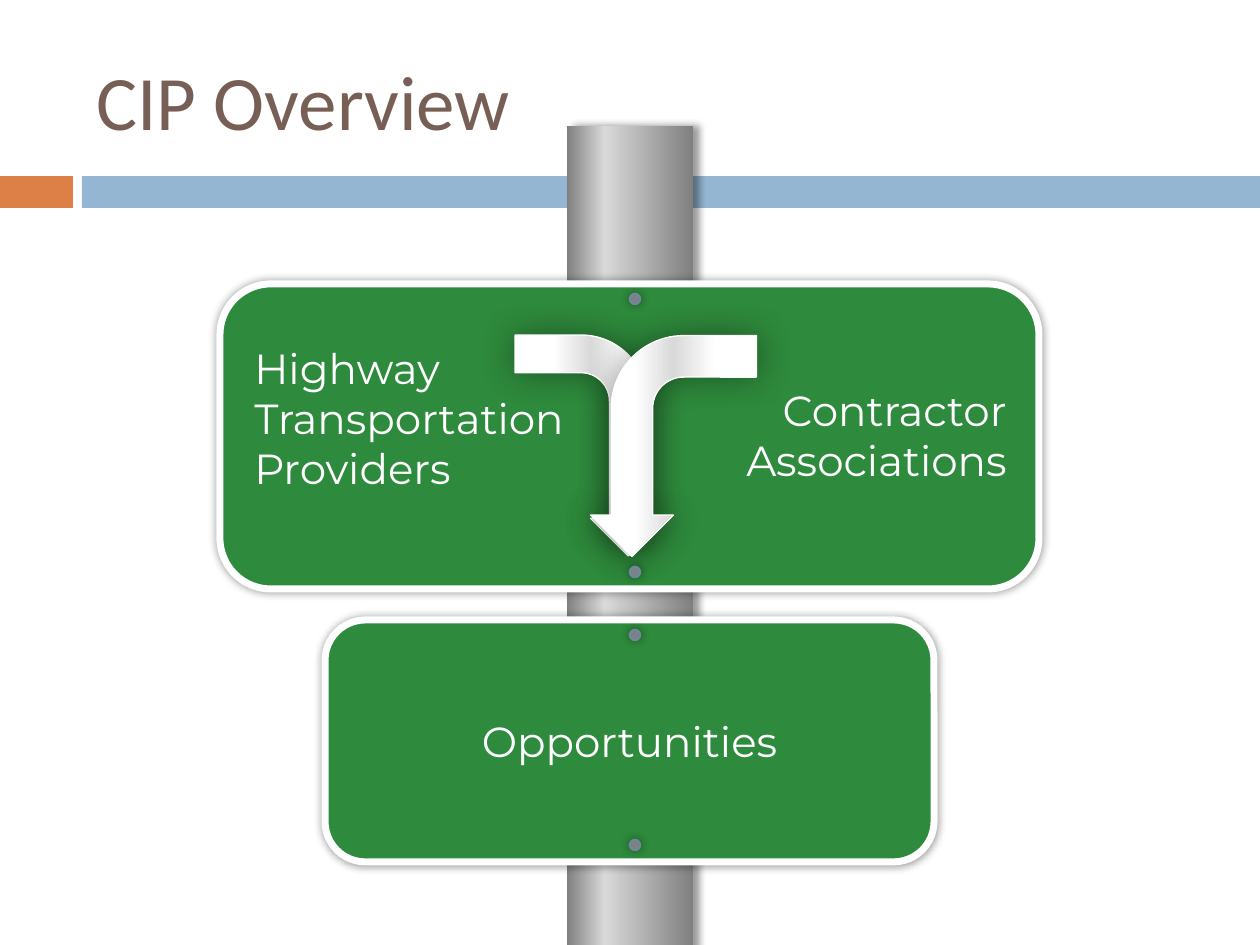
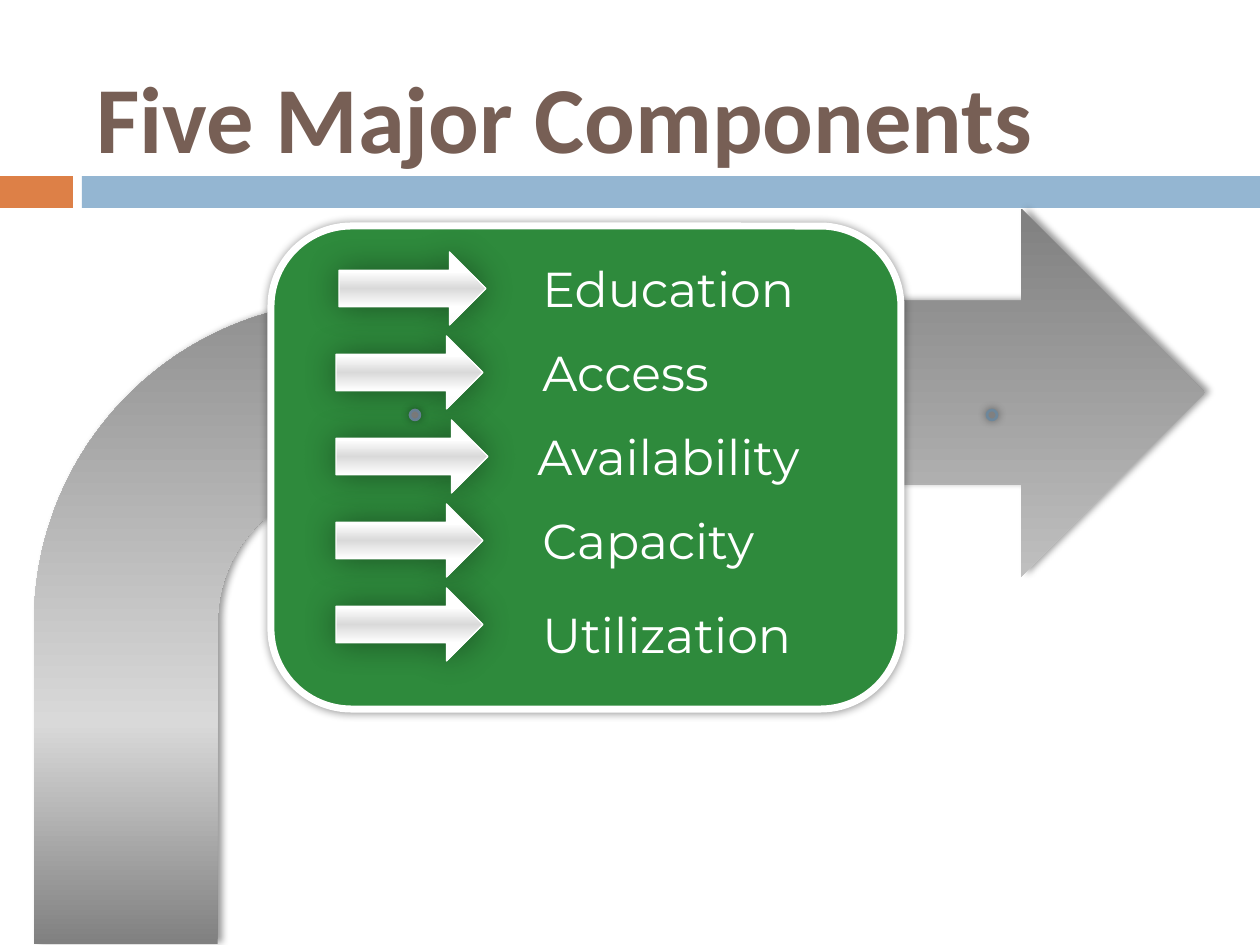
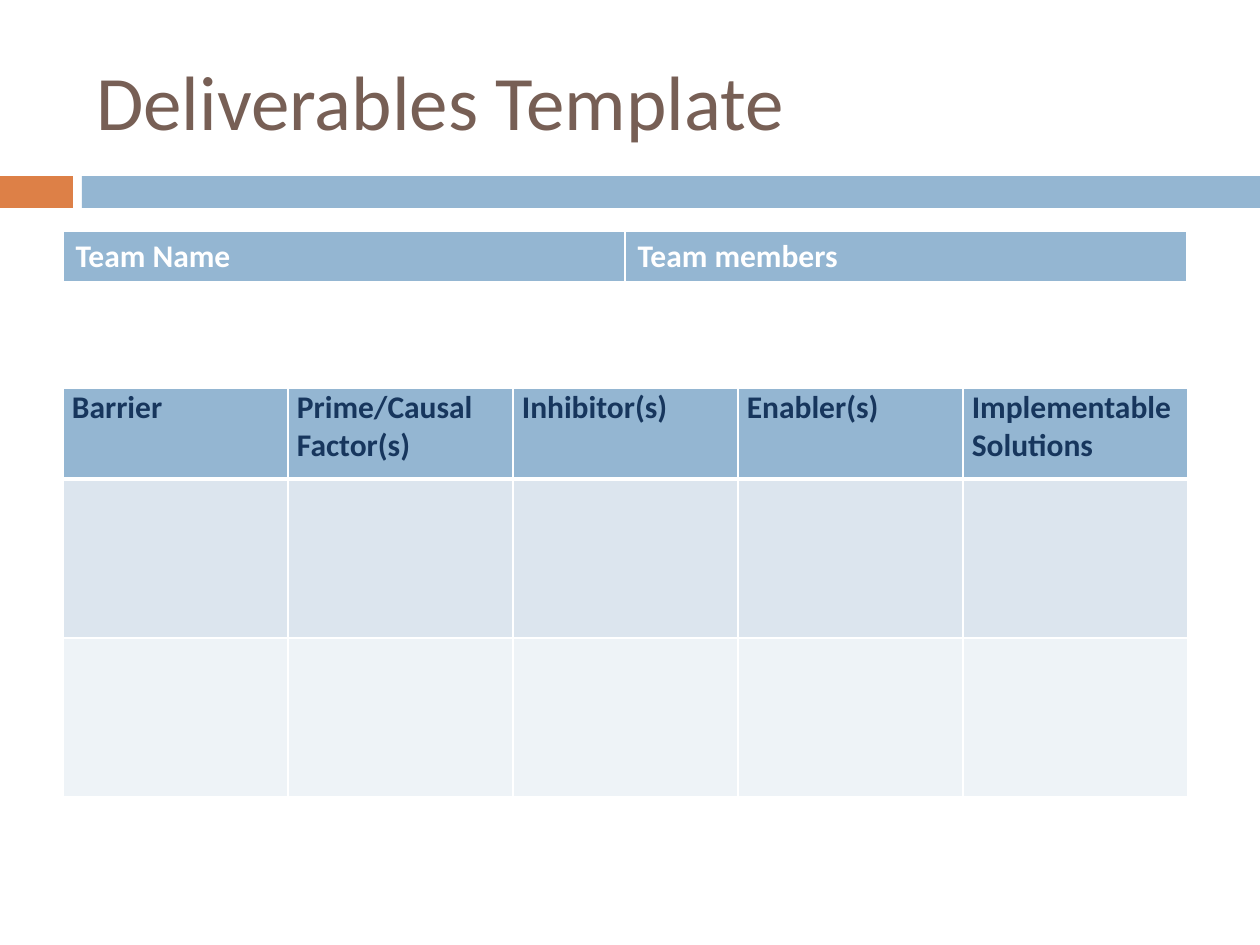
from dataclasses import dataclass

from lxml.etree import SubElement
from pptx import Presentation
from pptx.dml.color import RGBColor
from pptx.enum.shapes import MSO_SHAPE
from pptx.enum.text import MSO_ANCHOR, MSO_AUTO_SIZE, PP_ALIGN
from pptx.oxml.ns import qn
from pptx.util import Emu, Pt


@dataclass(frozen=True)
class Theme:
    heading_font: str = "Calibri"
    sign_font: str = "Montserrat"
    title_size: int = 44
    large_title_size: int = 54
    sign_size: int = 24
    list_size: int = 28
    table_size: int = 18
    white: str = "FFFFFF"
    black: str = "000000"
    brown: str = "775F55"
    orange: str = "DD8047"
    blue: str = "94B6D2"
    navy: str = "17365D"
    green: str = "2E8A3C"
    gray: str = "808080"
    rivet_rim: str = "6D879B"
    row_fills: tuple = ("DCE5EE", "EEF3F7")
    metal: tuple = ((0, "808080"), (30, "D9D9D9"), (100, "808080"))
    gloss: tuple = ((27, "FFFFFF"), (50, "D9D9D9"), (75, "FFFFFF"))


def px(length):
    return Emu(round(length * 914400 / 126))


class Deck:
    """Draws road-sign slides in one theme."""

    def __init__(self, theme):
        self.theme = theme
        self.presentation = Presentation()
        self.presentation.slide_width = px(1260)
        self.presentation.slide_height = px(945)
        self.slide = None

    def new_slide(self, title, box=(84, 32, 1124, 136), size=None, bold=False):
        theme = self.theme
        self.slide = self.presentation.slides.add_slide(self.presentation.slide_layouts[6])
        self.shape(MSO_SHAPE.RECTANGLE, (0, 176, 73, 32), theme.orange)
        self.shape(MSO_SHAPE.RECTANGLE, (82, 176, 1178, 32), theme.blue)
        frame = self.text_box(box).text_frame
        frame.vertical_anchor = MSO_ANCHOR.MIDDLE
        self.set_text(frame, title, size or theme.title_size, theme.brown,
                      theme.heading_font, bold)

    def set_text(self, frame, text, size, color, font, bold=False, align=PP_ALIGN.LEFT):
        frame.text = text
        for paragraph in frame.paragraphs:
            paragraph.alignment = align
            for run in paragraph.runs:
                run.font.name = font
                run.font.size = Pt(size)
                run.font.bold = bold
                run.font.color.rgb = RGBColor.from_string(color)

    def text_box(self, box):
        text_box = self.slide.shapes.add_textbox(*map(px, box))
        text_box.text_frame.word_wrap = True
        return text_box

    def label(self, box, text, size, align=PP_ALIGN.LEFT):
        frame = self.text_box(box).text_frame
        frame.auto_size = MSO_AUTO_SIZE.SHAPE_TO_FIT_TEXT
        self.set_text(frame, text, size, self.theme.white, self.theme.sign_font, align=align)

    def shape(self, kind, box, color=None, line=None, width=0):
        shape = self.slide.shapes.add_shape(kind, *map(px, box))
        shape.shadow.inherit = False
        if color:
            shape.fill.solid()
            shape.fill.fore_color.rgb = RGBColor.from_string(color)
        if line:
            shape.line.color.rgb = RGBColor.from_string(line)
            shape.line.width = Pt(width)
        else:
            shape.line.fill.background()
        return shape

    def gradient(self, shape, stops, angle):
        shape.fill.gradient()
        gradient = shape.element.spPr.find(qn("a:gradFill"))
        for child in list(gradient):
            gradient.remove(child)
        gradient.set("rotWithShape", "1")
        stop_list = SubElement(gradient, qn("a:gsLst"))
        for position, color in stops:
            stop = SubElement(stop_list, qn("a:gs"), pos=str(position * 1000))
            SubElement(stop, qn("a:srgbClr"), val=color)
        SubElement(gradient, qn("a:lin"), ang=str(angle * 60000), scaled="0")

    def cast_shadow(self, shape, blur, distance=0):
        effects = shape.element.spPr.find(qn("a:effectLst"))
        shadow = SubElement(effects, qn("a:outerShdw"), blurRad=str(Pt(blur)),
                            dist=str(Pt(distance)), dir="0", algn="ctr", rotWithShape="0")
        color = SubElement(shadow, qn("a:srgbClr"), val=self.theme.black)
        SubElement(color, qn("a:alpha"), val="40000")

    def metal(self, kind, box, angle):
        shape = self.shape(kind, box)
        self.gradient(shape, self.theme.metal, angle)
        self.cast_shadow(shape, 4, 3)

    def sign(self, box, text=None):
        theme = self.theme
        shape = self.shape(MSO_SHAPE.ROUNDED_RECTANGLE, box, theme.green, theme.white, 4)
        self.cast_shadow(shape, 5)
        if text:
            frame = shape.text_frame
            frame.vertical_anchor = MSO_ANCHOR.MIDDLE
            self.set_text(frame, text, theme.sign_size, theme.white, theme.sign_font,
                          align=PP_ALIGN.CENTER)

    def rivet(self, left, top):
        shape = self.shape(MSO_SHAPE.OVAL, (left, top, 10, 10),
                           self.theme.gray, self.theme.rivet_rim, 1.5)
        self.cast_shadow(shape, 5)

    def arrow(self, kind, box, rotation=0, flipped=False):
        shape = self.shape(kind, box, line=self.theme.white)
        shape.rotation = rotation
        if flipped:
            shape.element.spPr.get_or_add_xfrm().set("flipV", "1")
        self.gradient(shape, self.theme.gloss, 90)
        self.cast_shadow(shape, 20)

    def border(self, cell, bottom):
        properties = cell._tc.get_or_add_tcPr()
        for side, width in (("L", 1), ("R", 1), ("T", 1), ("B", bottom)):
            line = SubElement(properties, qn(f"a:ln{side}"), w=str(Pt(width)))
            fill = SubElement(line, qn("a:solidFill"))
            SubElement(fill, qn("a:srgbClr"), val=self.theme.white)

    def table(self, left, top, column_width, row_heights, headings, color, tight=False):
        theme = self.theme
        columns = len(headings)
        frame = self.slide.shapes.add_table(
            len(row_heights), columns,
            *map(px, (left, top, column_width * columns, sum(row_heights))))
        table = frame.table
        for column in table.columns:
            column.width = px(column_width)
        fills = (theme.blue, *theme.row_fills)
        for row, height, fill in zip(table.rows, row_heights, fills):
            row.height = px(height)
            for cell in row.cells:
                self.border(cell, 3 if fill == theme.blue else 1)
                cell.fill.solid()
                cell.fill.fore_color.rgb = RGBColor.from_string(fill)
                if tight:
                    cell.margin_left = cell.margin_right = px(9)
                    cell.margin_top = cell.margin_bottom = 0
        for cell, heading in zip(table.rows[0].cells, headings):
            self.set_text(cell.text_frame, heading, theme.table_size, color,
                          theme.heading_font, bold=True)


def overview(deck):
    size = deck.theme.sign_size
    deck.new_slide("CIP Overview")
    deck.metal(MSO_SHAPE.RECTANGLE, (567, 126, 126, 1029), 0)
    deck.sign((220, 284, 819, 305))
    deck.sign((325, 620, 609, 242), "Opportunities")
    deck.arrow(MSO_SHAPE.BENT_ARROW, (480, 370, 221, 151), 90)
    deck.arrow(MSO_SHAPE.BENT_ARROW, (563, 363, 221, 166), 90, flipped=True)
    deck.label((242, 336, 368, 165), "Highway Transportation Providers", size)
    deck.label((599, 378, 420, 115), "Contractor Associations", size, PP_ALIGN.RIGHT)
    for top in (294, 567, 630, 840):
        deck.rivet(630, top)


def components(deck):
    deck.new_slide("Five Major Components", (84, 42, 1134, 147),
                   deck.theme.large_title_size, bold=True)
    deck.metal(MSO_SHAPE.BENT_ARROW, (34, 209, 1171, 735), 270)
    deck.sign((271, 226, 630, 483))
    for left in (410, 987):
        deck.rivet(left, 410)
    rows = (
        ("Education", 339, 147, 530, 566, 0),
        ("Access", 336, 147, 530, 562, 0),
        ("Availability", 336, 152, 525, 682, 0),
        ("Capacity", 336, 147, 530, 562, 0),
        ("Utilization", 336, 147, 530, 667, 10),
    )
    for index, (name, left, width, label_left, label_width, drop) in enumerate(rows):
        top = 252 + 84 * index
        deck.arrow(MSO_SHAPE.RIGHT_ARROW, (left, top, width, 73))
        deck.label((label_left, top + drop, label_width, 72), name, deck.theme.list_size)


def deliverables(deck):
    deck.new_slide("Deliverables Template")
    deck.table(63, 231, 562, (52,), ("Team Name", "Team members"), deck.theme.white)
    headings = ("Barrier", "Prime/Causal Factor(s)", "Inhibitor(s)", "Enabler(s)",
                "Implementable Solutions")
    deck.table(63, 388, 225, (91, 159, 159), headings, deck.theme.navy, tight=True)


def main():
    deck = Deck(Theme())
    overview(deck)
    components(deck)
    deliverables(deck)
    deck.presentation.save("out.pptx")


if __name__ == "__main__":
    main()
